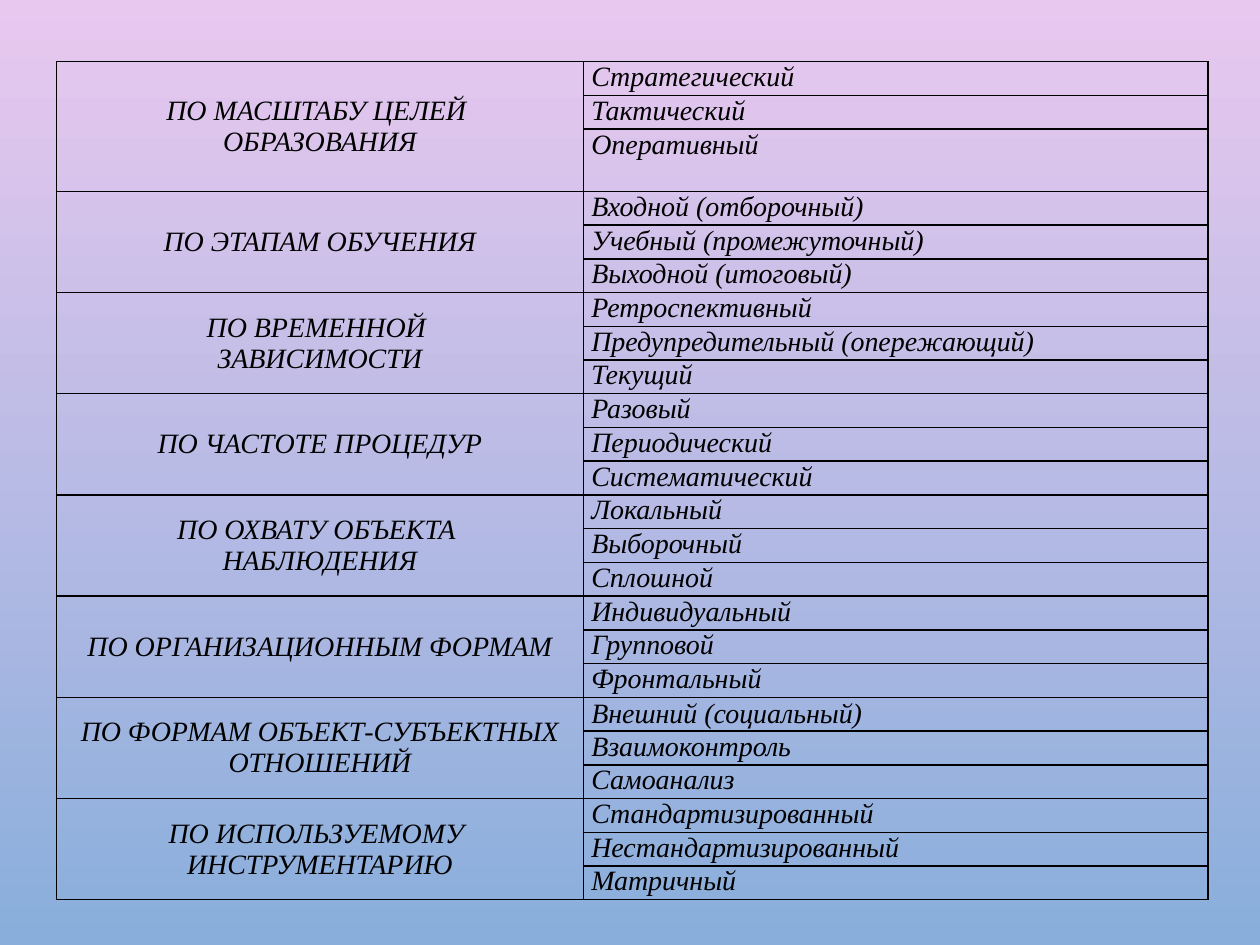
from lxml import etree
from pptx import Presentation
from pptx.dml import color
from pptx.enum import text
from pptx.oxml import ns
from pptx.util import Pt

COLORS = {"top": "E9C8EF", "bottom": "89AEDB", "ink": "000000"}
FONT = {"name": "Times New Roman", "size": Pt(16), "italic": True, "bold": False}
MARGINS = {"margin_left": Pt(4.5), "margin_right": Pt(4.5),
           "margin_top": Pt(0), "margin_bottom": Pt(0)}
PLAIN = ("first_row", "horz_banding")
ALIGN = text.PP_ALIGN
MIDDLE = text.MSO_ANCHOR.MIDDLE

COLUMN_WIDTHS = (301.2, 357)
ROW_HEIGHT = 19.3
TALL_ROW, TALL_HEIGHT = 2, 35.4

# Each heading is a list of paragraphs and spans the rows of its items
GROUPS = [
    (["ПО МАСШТАБУ ЦЕЛЕЙ ", "ОБРАЗОВАНИЯ"],
     ["Стратегический", "Тактический", "Оперативный"]),
    (["ПО ЭТАПАМ ОБУЧЕНИЯ"],
     ["Входной (отборочный)", "Учебный (промежуточный)", "Выходной (итоговый)"]),
    (["ПО ВРЕМЕННОЙ ", "ЗАВИСИМОСТИ"],
     ["Ретроспективный", "Предупредительный (опережающий)", "Текущий"]),
    (["ПО ЧАСТОТЕ ПРОЦЕДУР"],
     ["Разовый", "Периодический", "Систематический"]),
    (["ПО ОХВАТУ ОБЪЕКТА ", "НАБЛЮДЕНИЯ"],
     ["Локальный", "Выборочный", "Сплошной"]),
    (["ПО ОРГАНИЗАЦИОННЫМ ФОРМАМ"],
     ["Индивидуальный", "Групповой", "Фронтальный"]),
    (["ПО ФОРМАМ ОБЪЕКТ-СУБЪЕКТНЫХ ОТНОШЕНИЙ"],
     ["Внешний (социальный)", "Взаимоконтроль", "Самоанализ"]),
    (["ПО ИСПОЛЬЗУЕМОМУ ", "ИНСТРУМЕНТАРИЮ"],
     ["Стандартизированный", "Нестандартизированный", "Матричный"]),
]
GROUP_SIZE = 3
LEFT_ALIGNED_GROUP = 1
CENTERED_ITEM = "Внешний (социальный)"


def set_all(target, values):
    for name, value in values.items():
        setattr(target, name, value)


def paint_background(page):
    fill = page.background.fill
    fill.gradient()
    fill.gradient_angle = 270
    for stop, name in zip(fill.gradient_stops, ("top", "bottom")):
        stop.color.rgb = color.RGBColor.from_string(COLORS[name])


def add_borders(cell):
    properties = cell._tc.get_or_add_tcPr()
    for side in ("a:lnL", "a:lnR", "a:lnT", "a:lnB"):
        line = etree.SubElement(properties, ns.qn(side), w=str(Pt(1)))
        solid = etree.SubElement(line, ns.qn("a:solidFill"))
        etree.SubElement(solid, ns.qn("a:srgbClr"), val=COLORS["ink"])


def write_cell(cell, lines, alignment):
    frame = cell.text_frame
    for index, line in enumerate(lines):
        para = frame.add_paragraph() if index else frame.paragraphs[0]
        para.alignment = alignment
        span = para.add_run()
        span.text = line
        set_all(span.font, FONT)
        span.font.color.rgb = color.RGBColor.from_string(COLORS["ink"])


def add_grid(page):
    """Add the empty bordered table with see-through cells."""
    count = len(GROUPS) * GROUP_SIZE
    heights = [ROW_HEIGHT] * count
    heights[TALL_ROW] = TALL_HEIGHT
    table = page.shapes.add_table(count, 2, Pt(32.2), Pt(35.2),
                                  Pt(sum(COLUMN_WIDTHS)), Pt(sum(heights))).table
    set_all(table, dict.fromkeys(PLAIN, False))
    for column, width in zip(table.columns, COLUMN_WIDTHS):
        column.width = Pt(width)
    for row, height in zip(table.rows, heights):
        row.height = Pt(height)
    for cell in table.iter_cells():
        set_all(cell, MARGINS)
        add_borders(cell)
        cell.fill.background()
    return table


def fill_group(table, number, heading, items):
    first = number * GROUP_SIZE
    head = table.cell(first, 0)
    head.merge(table.cell(first + GROUP_SIZE - 1, 0))
    head.vertical_anchor = MIDDLE
    write_cell(head, heading, ALIGN.CENTER)
    for row, item in enumerate(items, first):
        cell = table.cell(row, 1)
        plain = number == LEFT_ALIGNED_GROUP or item == CENTERED_ITEM
        write_cell(cell, [item], ALIGN.LEFT if plain else ALIGN.JUSTIFY)
        if item == CENTERED_ITEM:
            cell.vertical_anchor = MIDDLE


def main():
    deck = Presentation()
    set_all(deck, {"slide_width": Pt(720), "slide_height": Pt(540)})
    page = deck.slides.add_slide(deck.slide_layouts[6])
    paint_background(page)
    table = add_grid(page)
    for number, (heading, items) in enumerate(GROUPS):
        fill_group(table, number, heading, items)
    deck.save("out.pptx")


if __name__ == "__main__":
    main()
